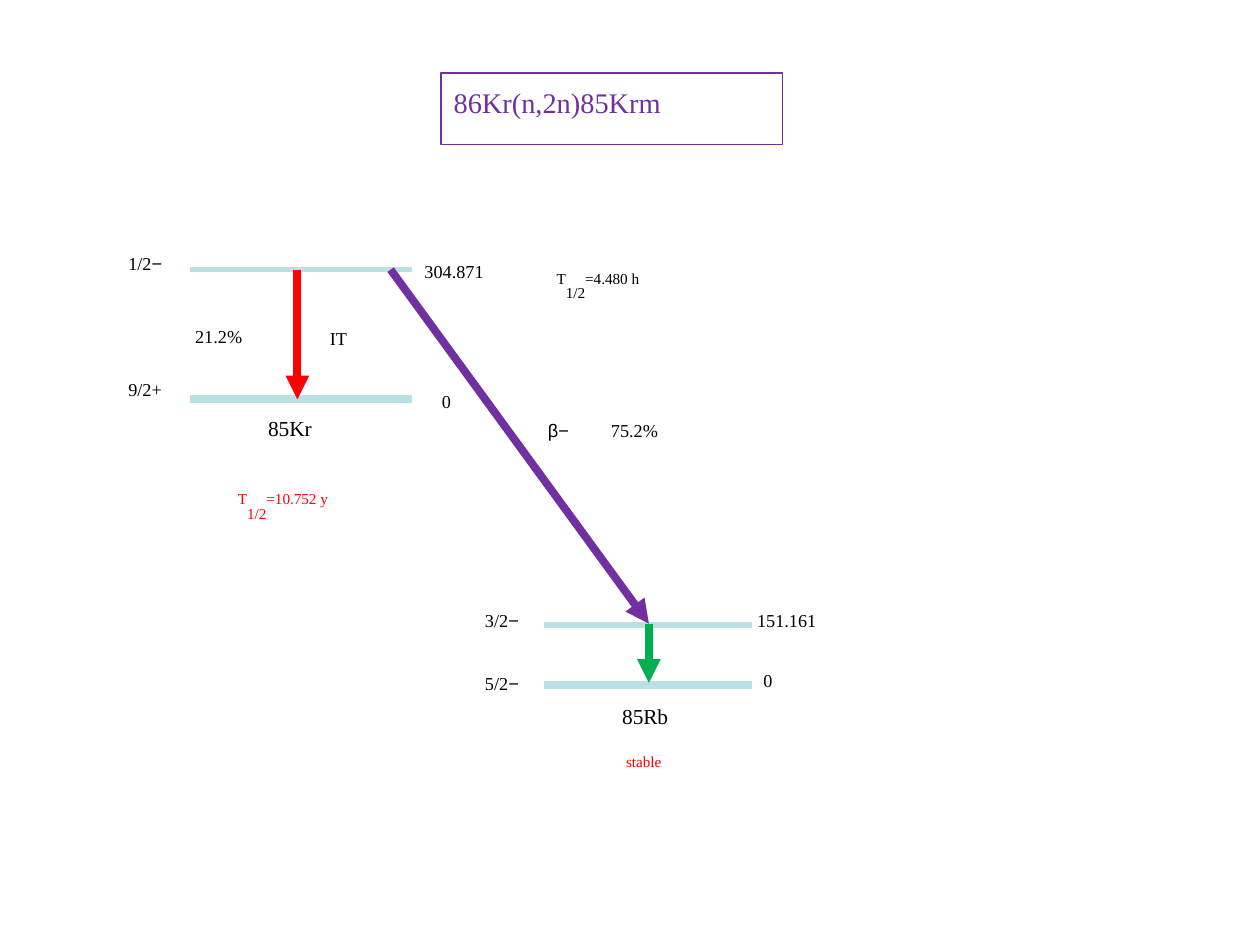
"""Build a decay scheme slide for the 86Kr(n,2n)85Krm reaction."""
from lxml import etree
from pptx import Presentation
from pptx.dml.color import RGBColor
from pptx.enum import shapes, text
from pptx.oxml.ns import qn
from pptx.util import Inches, Pt

COLORS = {"black": "000000", "red": "FF0000", "green": "00B050",
          "purple": "7030A0", "level": "BBE0E3"}
SERIF, SANS = "Times New Roman", "Arial"
RAISED, LOWERED = 30000, -25000


def write_text(shape, *pieces, size=18, color="black", fixed=False):
    """Fill a shape with pieces, each a string or (string, font, baseline)."""
    frame = shape.text_frame
    frame.word_wrap = fixed
    frame.auto_size = text.MSO_AUTO_SIZE.NONE if fixed else text.MSO_AUTO_SIZE.SHAPE_TO_FIT_TEXT
    frame.vertical_anchor = text.MSO_ANCHOR.TOP
    paragraph = frame.paragraphs[0]
    paragraph.alignment = text.PP_ALIGN.LEFT
    for piece in pieces:
        words, font_name, baseline = (piece, SERIF, RAISED) if isinstance(piece, str) else piece
        run = paragraph.add_run()
        run.text = words
        run.font.name = font_name
        run.font.size = Pt(size)
        run.font.color.rgb = RGBColor.from_string(COLORS[color])
        run.font._element.set("baseline", str(baseline))


def add_line(slide, start, end, color, width=4.5, arrow=False):
    """Draw a straight line, with an arrowhead at its end on request."""
    points = [Inches(value) for value in (*start, *end)]
    connector = slide.shapes.add_connector(shapes.MSO_CONNECTOR.STRAIGHT, *points)
    connector.line.color.rgb = RGBColor.from_string(COLORS[color])
    connector.line.width = Pt(width)
    if arrow:
        etree.SubElement(connector.line._get_or_add_ln(), qn("a:tailEnd"), type="triangle")
    etree.SubElement(connector._element.spPr, qn("a:effectLst"))


presentation = Presentation()
presentation.slide_width = Inches(10)
presentation.slide_height = Inches(7.5)
slide = presentation.slides.add_slide(presentation.slide_layouts[5])

title = slide.shapes.title
title.left, title.top = Inches(3.5), Inches(0.58)
title.width, title.height = Inches(2.71), Inches(0.57)
title.line.color.rgb = RGBColor.from_string(COLORS["purple"])
title.line.width = Pt(0.75)
write_text(title, "86Kr(n,2n)85Krm", size=28, color="purple", fixed=True)

levels = [(1.51, 3.27, 2.14, 3), (1.51, 3.27, 3.17, 4.5),
          (4.32, 5.97, 4.96, 3), (4.32, 5.97, 5.44, 4.5)]
for left, right, y, width in levels:
    add_line(slide, (left, y), (right, y), "level", width)

transitions = [((2.36, 2.14), (2.36, 3.17), "red"),
               ((5.15, 4.95), (5.15, 5.42), "green"),
               ((3.1, 2.14), (5.15, 4.95), "purple")]
for start, end, color in transitions:
    add_line(slide, start, end, color, arrow=True)

minus = ("−", SANS, RAISED)
beta = ("β", SANS, RAISED)
half = ("1/2", SERIF, LOWERED)
labels = [
    (0.92, 1.92, 0.62, ["1/2", minus], 18, "black"),
    (0.92, 2.92, 0.62, ["9/2+"], 18, "black"),
    (3.75, 4.76, 0.62, ["3/2", minus], 18, "black"),
    (3.75, 5.26, 0.62, ["5/2", minus], 18, "black"),
    (3.27, 1.99, 1.02, ["304.871"], 18, "black"),
    (3.41, 3.02, 0.33, ["0"], 18, "black"),
    (5.91, 4.76, 1.02, ["151.161"], 18, "black"),
    (5.96, 5.23, 0.33, ["0"], 18, "black"),
    (1.45, 2.5, 0.85, ["21.2%"], 18, "black"),
    (2.52, 2.52, 0.44, ["IT"], 18, "black"),
    (4.25, 3.25, 0.43, [beta, minus], 18, "black"),
    (4.75, 3.25, 0.85, ["75.2%"], 18, "black"),
    (2.03, 3.21, 0.71, ["85Kr"], 21, "black"),
    (4.84, 5.5, 0.74, ["85Rb"], 21, "black"),
    (4.32, 2.06, 1.26, ["T", half, "=4.480 h"], 15, "black"),
    (1.79, 3.81, 1.36, ["T", half, "=10.752 y"], 15, "red"),
    (4.87, 5.9, 0.69, ["stable"], 15, "red"),
]
heights = {15: 0.35, 18: 0.4, 21: 0.45}
for left, top, width, pieces, size, color in labels:
    box = slide.shapes.add_textbox(Inches(left), Inches(top), Inches(width), Inches(heights[size]))
    write_text(box, *pieces, size=size, color=color)

presentation.save("out.pptx")
